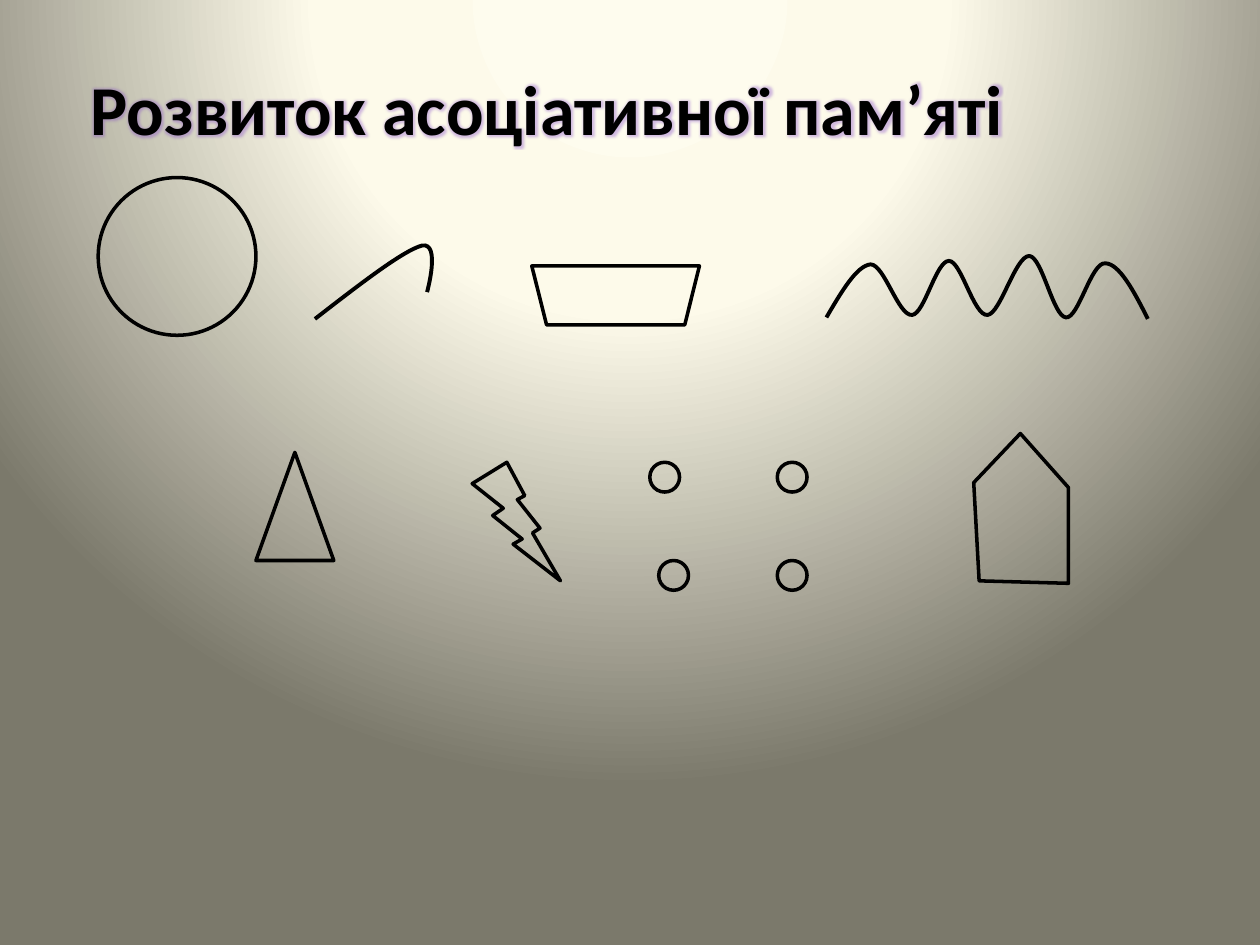
from lxml import etree
from pptx import Presentation
from pptx.dml.color import RGBColor
from pptx.enum.shapes import MSO_SHAPE as Preset
from pptx.oxml.ns import qn
from pptx.util import Cm, Pt

BLACK = "000000"
BACKDROP = [(0, "FEFCEE"), (40, "FDFAEA"), (100, "7B796B")]

# Outlines in centimetres; curves hold a start and then three points a segment
HOUSE = [(19.74, 11.71), (21.54, 11.76), (21.54, 9.83), (20.57, 8.74), (19.63, 9.73)]
HOOK = [(6.35, 6.43),
        (7.24, 5.74), (8.13, 5.05), (8.51, 4.95),
        (8.89, 4.88), (8.61, 5.89), (8.61, 5.89)]
WAVE = [(16.66, 6.4),
        (16.97, 5.87), (17.27, 5.36), (17.55, 5.33),
        (17.83, 5.33), (18.11, 6.38), (18.39, 6.35),
        (18.64, 6.32), (18.87, 5.26), (19.13, 5.26),
        (19.38, 5.26), (19.63, 6.38), (19.91, 6.35),
        (20.17, 6.32), (20.47, 5.16), (20.75, 5.16),
        (21.01, 5.18), (21.23, 6.38), (21.49, 6.4),
        (21.74, 6.43), (22, 5.28), (22.28, 5.31),
        (22.56, 5.31), (22.86, 5.87), (23.14, 6.43)]
DOTS = [(13.1, 9.32), (13.28, 11.3), (15.67, 11.3), (15.67, 9.32)]


def color(value):
    return RGBColor.from_string(value)


def add_node(parent, tag, **attributes):
    return etree.SubElement(parent, qn(tag), {k: str(v) for k, v in attributes.items()})


def paint_background(page, stops):
    """Radial gradient centred above the slide."""
    page.background.fill.gradient()
    gradient = page.element.find(".//" + qn("a:gradFill"))
    for child in list(gradient):
        gradient.remove(child)
    stop_list = add_node(gradient, "a:gsLst")
    for position, value in stops:
        stop = add_node(stop_list, "a:gs", pos=position * 1000)
        add_node(stop, "a:srgbClr", val=value)
    shade = add_node(gradient, "a:path", path="circle")
    add_node(shade, "a:fillToRect", l=50000, t=-80000, r=50000, b=180000)


def outline(shape, weight):
    shape.shadow.inherit = False
    shape.fill.background()
    shape.line.color.rgb = color(BLACK)
    shape.line.width = Pt(weight)


def add_figure(page, preset, left, top, width, height, rotation=0):
    shape = page.shapes.add_shape(preset, Cm(left), Cm(top), Cm(width), Cm(height))
    shape.rotation = rotation
    outline(shape, 2)


def add_outline(page, points, weight, close):
    start, *rest = [(Cm(x), Cm(y)) for x, y in points]
    builder = page.shapes.build_freeform(*start)
    builder.add_line_segments(rest, close=close)
    shape = builder.convert_to_shape()
    outline(shape, weight)
    return shape


def add_curve(page, points):
    """Turn each three line segments into one cubic curve."""
    shape = add_outline(page, points, 2.25, close=False)
    track = shape.element.find(".//" + qn("a:path"))
    lines = track.findall(qn("a:lnTo"))
    for first in range(0, len(lines), 3):
        curve = add_node(track, "a:cubicBezTo")
        for line in lines[first:first + 3]:
            curve.append(line[0])
            track.remove(line)


def add_title(page, text):
    box = page.shapes.add_textbox(Cm(1.57), Cm(1.19), Cm(19.46), Cm(1.96))
    box.text_frame.text = text
    span = box.text_frame.paragraphs[0].runs[0]
    span.font.name = "Calibri"
    span.font.size = Pt(40)
    span.font.bold = True
    span.font.color.rgb = color(BLACK)
    # Soft violet glow behind the letters
    effects = etree.Element(qn("a:effectLst"))
    glow = add_node(effects, "a:glow", rad=45500)
    tint = add_node(glow, "a:srgbClr", val="8064A2")
    add_node(tint, "a:satMod", val=220000)
    add_node(tint, "a:alpha", val=35000)
    span.font.fill  # the fill must precede the effects
    span._r.rPr.find(qn("a:solidFill")).addnext(effects)


def main():
    deck = Presentation()
    deck.slide_width, deck.slide_height = Cm(25.4), Cm(19.05)
    page = deck.slides.add_slide(deck.slide_layouts[6])
    paint_background(page, BACKDROP)

    # Upper row
    add_figure(page, Preset.OVAL, 1.98, 3.58, 3.18, 3.18)
    add_curve(page, WAVE)
    add_figure(page, Preset.TRAPEZOID, 10.72, 5.36, 3.38, 1.19, rotation=180)
    add_curve(page, HOOK)

    # Lower row
    add_figure(page, Preset.ISOSCELES_TRIANGLE, 5.16, 9.12, 1.57, 2.18)
    add_figure(page, Preset.LIGHTNING_BOLT, 9.52, 9.32, 1.78, 2.39)
    for left, top in DOTS:
        add_figure(page, Preset.OVAL, left, top, 0.6, 0.6)
    add_outline(page, HOUSE, 2, close=True)

    add_title(page, "Розвиток асоціативної пам’яті")
    deck.save("out.pptx")


if __name__ == "__main__":
    main()
